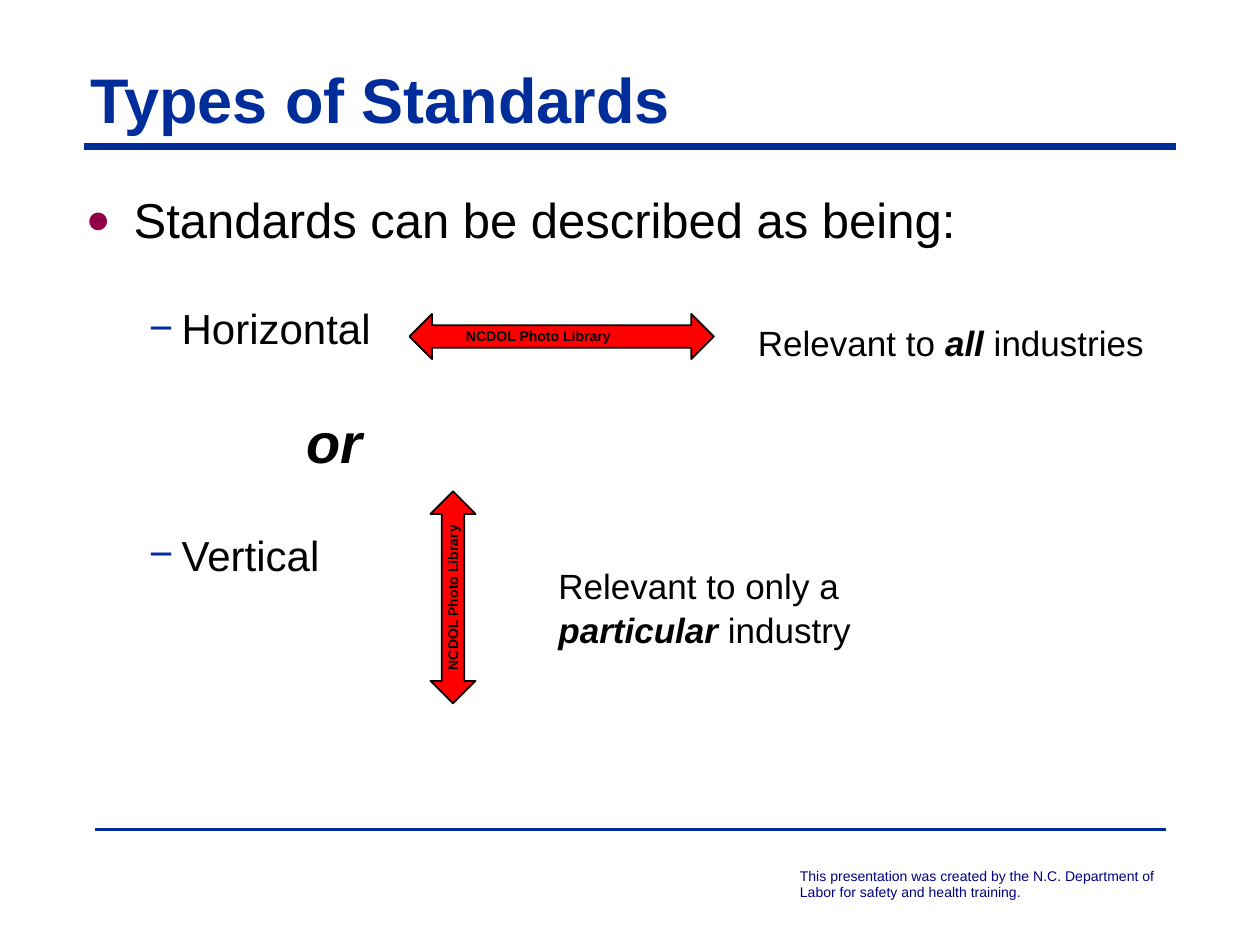
"""Build the "Types of Standards" slide on a grid of 120 columns by 90 rows."""
from typing import NamedTuple, Optional

from lxml.etree import SubElement
from pptx import Presentation
from pptx.dml.color import RGBColor
from pptx.enum.shapes import MSO_CONNECTOR, MSO_SHAPE
from pptx.enum.text import MSO_ANCHOR, PP_ALIGN
from pptx.oxml.ns import qn
from pptx.util import Inches, Pt

CELL = Inches(10) // 120
BLUE, NAVY, PLUM, RED, BLACK = "012D9A", "000080", "910046", "FF0000", "000000"


class Area(NamedTuple):
    """Left, top, width and height in grid cells."""
    left: float
    top: float
    width: float
    height: float


class Phrase(NamedTuple):
    """A run of text with its emphasis."""
    words: str
    bold: bool = False
    italic: bool = False


class Point(NamedTuple):
    """A paragraph of the outline, with lengths in inches."""
    phrase: Phrase
    size: int
    margin: float
    hanging: float = 0
    bullet: Optional[str] = None
    bullet_color: str = BLUE
    bullet_size: int = 100


class Note(NamedTuple):
    """A text box beside the outline."""
    area: Area
    phrases: tuple[Phrase, ...]
    size: int
    color: str = BLACK
    spacing: float = 1
    wrap: bool = True
    rotation: int = 0


class Rule(NamedTuple):
    """A horizontal line in grid cells, with its weight in points."""
    start: float
    end: float
    row: float
    weight: float


class Arrow(NamedTuple):
    """A double-headed block arrow."""
    kind: MSO_SHAPE
    area: Area


RULES = (Rule(8, 112, 14, 4), Rule(9, 111, 79, 2))
ARROWS = (
    Arrow(MSO_SHAPE.LEFT_RIGHT_ARROW, Area(39, 29.9, 29, 4.3)),
    Arrow(MSO_SHAPE.UP_DOWN_ARROW, Area(41, 46.8, 4.3, 20.2)),
)
OUTLINE = (
    Point(Phrase("Standards can be described as being:"), 28, 0.38, 0.38, "●", PLUM, 84),
    Point(Phrase("Horizontal"), 24, 0.76, 0.26, "−"),
    Point(Phrase("or", True, True), 32, 1.75),
    Point(Phrase("Vertical"), 24, 0.76, 0.26, "−"),
)
CREDIT = (Phrase("NCDOL Photo Library", True),)
NOTES = (
    Note(Area(75, 82, 39, 4.4), (Phrase("This presentation was created by the N.C. Department of "
                                        "Labor for safety and health training."),), 8, NAVY),
    Note(Area(52, 53, 33, 9.2), (Phrase("Relevant to only a "), Phrase("particular", True, True),
                                 Phrase(" industry")), 20, spacing=1.05),
    Note(Area(71, 29.8, 40, 5.3), (Phrase("Relevant to "), Phrase("all", True, True),
                                   Phrase(" industries")), 20, spacing=1.05),
    Note(Area(43.2, 30.6, 16.3, 2.9), CREDIT, 8, wrap=False),
    Note(Area(35, 55.4, 16.3, 2.9), CREDIT, 8, wrap=False, rotation=270),
)


def rgb(color: str) -> RGBColor:
    """Turn a hex string into a colour."""
    return RGBColor.from_string(color)


def cells(*counts: float) -> list[int]:
    """Turn grid counts into lengths."""
    return [round(count * CELL) for count in counts]


def add_phrase(paragraph, phrase: Phrase, size: int, color: str) -> None:
    """Append one formatted run."""
    run = paragraph.add_run()
    run.text = phrase.words
    run.font.name, run.font.size = "Arial", Pt(size)
    run.font.bold, run.font.italic = phrase.bold, phrase.italic
    run.font.color.rgb = rgb(color)


def indent(paragraph, point: Point) -> None:
    """Set the margin, hanging indent and bullet of a paragraph."""
    properties = paragraph._p.get_or_add_pPr()
    properties.set("marL", str(Inches(point.margin)))
    properties.set("indent", str(-Inches(point.hanging)))
    if point.bullet:
        tint = SubElement(properties, qn("a:buClr"))
        SubElement(tint, qn("a:srgbClr"), val=point.bullet_color)
        SubElement(properties, qn("a:buSzPct"), val=str(point.bullet_size * 1000))
        SubElement(properties, qn("a:buFont"), typeface="Arial")
        SubElement(properties, qn("a:buChar"), char=point.bullet)


def draw_rule(slide, rule: Rule) -> None:
    """Draw a blue line across the slide."""
    line = slide.shapes.add_connector(
        MSO_CONNECTOR.STRAIGHT, *cells(rule.start, rule.row, rule.end, rule.row))
    line.line.color.rgb, line.line.width = rgb(BLUE), Pt(rule.weight)
    SubElement(line._element.spPr, qn("a:effectLst"))


def draw_title(slide, words: str) -> None:
    """Place and format the title placeholder."""
    title = slide.shapes.title
    title.left, title.top, title.width, title.height = cells(8, 5.8, 108, 7.2)
    frame = title.text_frame
    frame.margin_left = frame.margin_right = Inches(0.05)
    frame.margin_top = frame.margin_bottom = 0
    frame.vertical_anchor = MSO_ANCHOR.BOTTOM
    frame.paragraphs[0].alignment = PP_ALIGN.LEFT
    add_phrase(frame.paragraphs[0], Phrase(words, True), 36, BLUE)


def draw_outline(slide, points: tuple[Point, ...]) -> None:
    """Write the evenly spaced outline."""
    frame = slide.shapes.add_textbox(*cells(7, 17, 107, 51.4)).text_frame
    frame.word_wrap, frame.margin_top = True, Inches(0.09)
    for index, point in enumerate(points):
        paragraph = frame.add_paragraph() if index else frame.paragraphs[0]
        indent(paragraph, point)
        if index:
            paragraph.space_before = Pt(31)
        add_phrase(paragraph, point.phrase, point.size, BLACK)


def draw_arrow(slide, arrow: Arrow) -> None:
    """Draw a red arrow with a black outline."""
    shape = slide.shapes.add_shape(arrow.kind, *cells(*arrow.area))
    shape.shadow.inherit = False
    shape.fill.solid()
    shape.fill.fore_color.rgb = rgb(RED)
    shape.line.color.rgb, shape.line.width = rgb(BLACK), Pt(1)


def draw_note(slide, note: Note) -> None:
    """Write a text box run by run."""
    box = slide.shapes.add_textbox(*cells(*note.area))
    box.rotation = note.rotation
    box.text_frame.word_wrap = note.wrap
    paragraph = box.text_frame.paragraphs[0]
    paragraph.line_spacing = note.spacing
    for phrase in note.phrases:
        add_phrase(paragraph, phrase, note.size, note.color)


def main() -> None:
    """Build and save the slide."""
    deck = Presentation()
    deck.slide_width, deck.slide_height = cells(120, 90)
    slide = deck.slides.add_slide(deck.slide_layouts[5])
    for rule in RULES:
        draw_rule(slide, rule)
    draw_title(slide, "Types of Standards")
    draw_outline(slide, OUTLINE)
    for arrow in ARROWS:
        draw_arrow(slide, arrow)
    for note in NOTES:
        draw_note(slide, note)
    deck.save("out.pptx")


if __name__ == "__main__":
    main()
